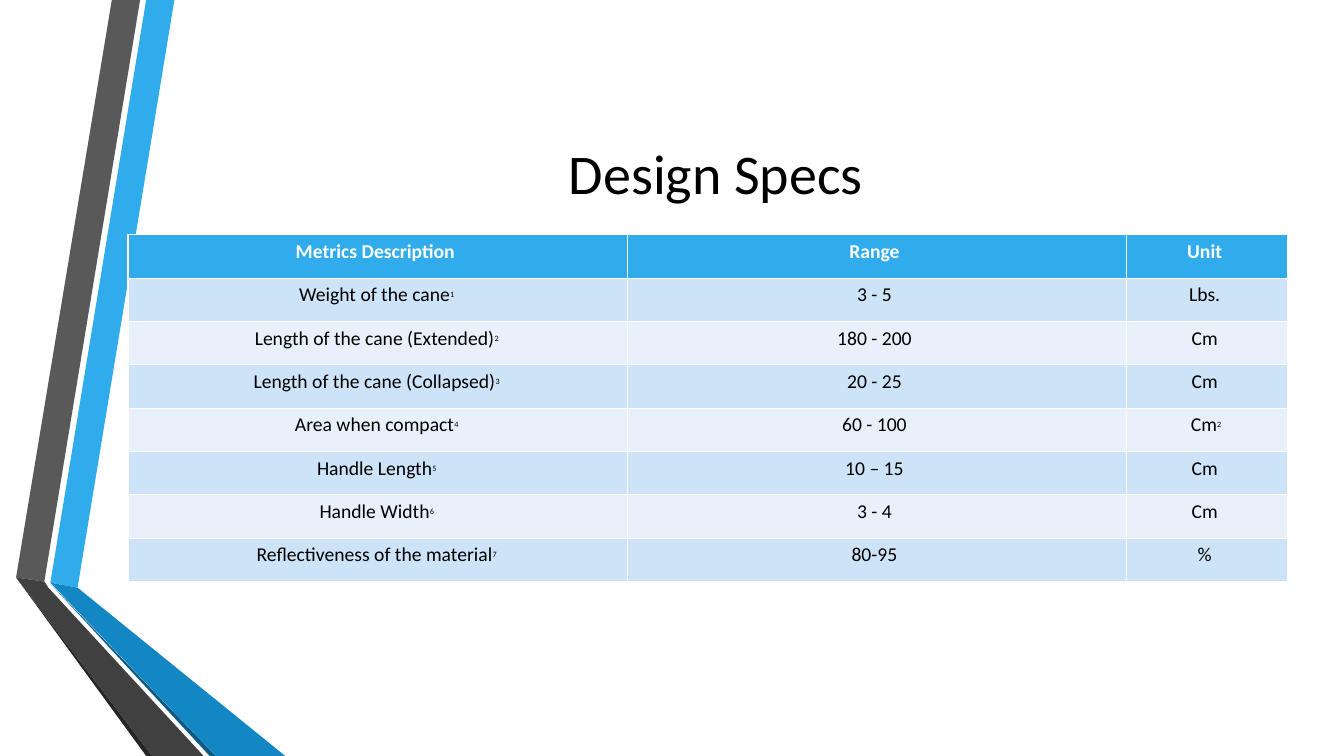
from dataclasses import dataclass

from pptx import Presentation
from pptx.dml.color import RGBColor
from pptx.enum.text import MSO_ANCHOR, PP_ALIGN
from pptx.util import Inches, Pt


@dataclass(frozen=True)
class Theme:
    font: str = "Calibri"
    title_size: int = 40
    table_size: int = 14
    superscript_size: int = 10
    black: str = "000000"
    white: str = "FFFFFF"
    blue: str = "30ACEC"
    blue_fold: str = "1287C3"
    blue_edge: str = "0C5A82"
    grey: str = "595959"
    grey_fold: str = "404040"
    grey_edge: str = "262626"
    row_dark: str = "CDE3F8"
    row_light: str = "E8F1FB"


THEME = Theme()
TRAILING_SPACE = " "  # no-break space that closes every cell

RIBBONS = [
    (THEME.blue, [(0.5, 5.78), (0.77, 5.83), (1.73, 0), (1.45, 0)]),
    (THEME.grey, [(1.39, 0), (1.11, 0), (0.16, 5.73), (0.44, 5.77)]),
    (THEME.grey_edge, [(0.16, 5.73), (1.45, 7.5), (1.51, 7.5)]),
    (THEME.blue_edge, [(0.5, 5.79), (2.08, 7.5), (2.14, 7.5)]),
    (THEME.blue_fold, [(0.5, 5.78), (2.14, 7.5), (2.83, 7.5), (0.77, 5.83)]),
    (THEME.grey_fold, [(2.02, 7.5), (0.48, 5.83), (0.44, 5.77), (0.16, 5.73), (1.51, 7.5)]),
]

COLUMN_WIDTHS = [4.95, 4.95, 1.6]
ROW_HEIGHT = 0.43

# Each cell is a text, or a text with its superscript.
HEADER = ["Metrics Description", "Range", "Unit"]
SPECS = [
    [("Weight of the cane", "1"), "3 - 5", "Lbs."],
    [("Length of the cane (Extended)", "2"), "180 - 200", "Cm"],
    [("Length of the cane (Collapsed)", "3"), "20 - 25", "Cm"],
    [("Area when compact", "4"), "60 - 100", ("Cm", "2")],
    [("Handle Length", "5"), "10 – 15", "Cm"],
    [("Handle Width", "6"), "3 - 4", "Cm"],
    [("Reflectiveness of the material", "7"), "80-95", "%"],
]


def add_run(paragraph, text, size, color, bold=False):
    run = paragraph.add_run()
    run.text = text
    run.font.name = THEME.font
    run.font.size = Pt(size)
    run.font.bold = bold
    run.font.color.rgb = RGBColor.from_string(color)
    return run


def add_ribbon(slide, color, points):
    start, *rest = [(Inches(x), Inches(y)) for x, y in points]
    builder = slide.shapes.build_freeform(*start)
    builder.add_line_segments(rest, close=True)
    shape = builder.convert_to_shape()
    shape.shadow.inherit = False
    shape.fill.solid()
    shape.fill.fore_color.rgb = RGBColor.from_string(color)
    shape.line.fill.background()


def add_title(slide, text):
    title = slide.shapes.title
    title.left, title.top = Inches(1.62), Inches(0.75)
    title.width, title.height = Inches(10.96), Inches(1.92)
    title.text_frame.vertical_anchor = MSO_ANCHOR.MIDDLE
    paragraph = title.text_frame.paragraphs[0]
    paragraph.alignment = PP_ALIGN.CENTER
    add_run(paragraph, text, THEME.title_size, THEME.black)


def fill_cell(cell, content, fill, color, bold):
    cell.fill.solid()
    cell.fill.fore_color.rgb = RGBColor.from_string(fill)
    paragraph = cell.text_frame.paragraphs[0]
    paragraph.alignment = PP_ALIGN.CENTER
    if isinstance(content, str):
        add_run(paragraph, content + TRAILING_SPACE, THEME.table_size, color, bold)
        return
    text, superscript = content
    add_run(paragraph, text, THEME.table_size, color, bold)
    raised = add_run(paragraph, superscript + TRAILING_SPACE, THEME.superscript_size, color, bold)
    raised.font._element.set("baseline", "30000")


def add_specs_table(slide):
    rows = [HEADER, *SPECS]
    frame = slide.shapes.add_table(
        len(rows), len(COLUMN_WIDTHS), Inches(1.27), Inches(2.33),
        Inches(sum(COLUMN_WIDTHS)), Inches(ROW_HEIGHT * len(rows)))
    table = frame.table
    for column, width in zip(table.columns, COLUMN_WIDTHS):
        column.width = Inches(width)
    for index, contents in enumerate(rows):
        is_header = index == 0
        band = THEME.row_dark if index % 2 else THEME.row_light
        fill = THEME.blue if is_header else band
        color = THEME.white if is_header else THEME.black
        table.rows[index].height = Inches(ROW_HEIGHT)
        for cell, content in zip(table.rows[index].cells, contents):
            fill_cell(cell, content, fill, color, bold=is_header)


def main():
    presentation = Presentation()
    presentation.slide_width = Inches(13.33)
    presentation.slide_height = Inches(7.5)
    slide = presentation.slides.add_slide(presentation.slide_layouts[5])
    for color, points in RIBBONS:
        add_ribbon(slide, color, points)
    add_title(slide, "Design Specs")
    add_specs_table(slide)
    presentation.save("out.pptx")


if __name__ == "__main__":
    main()
